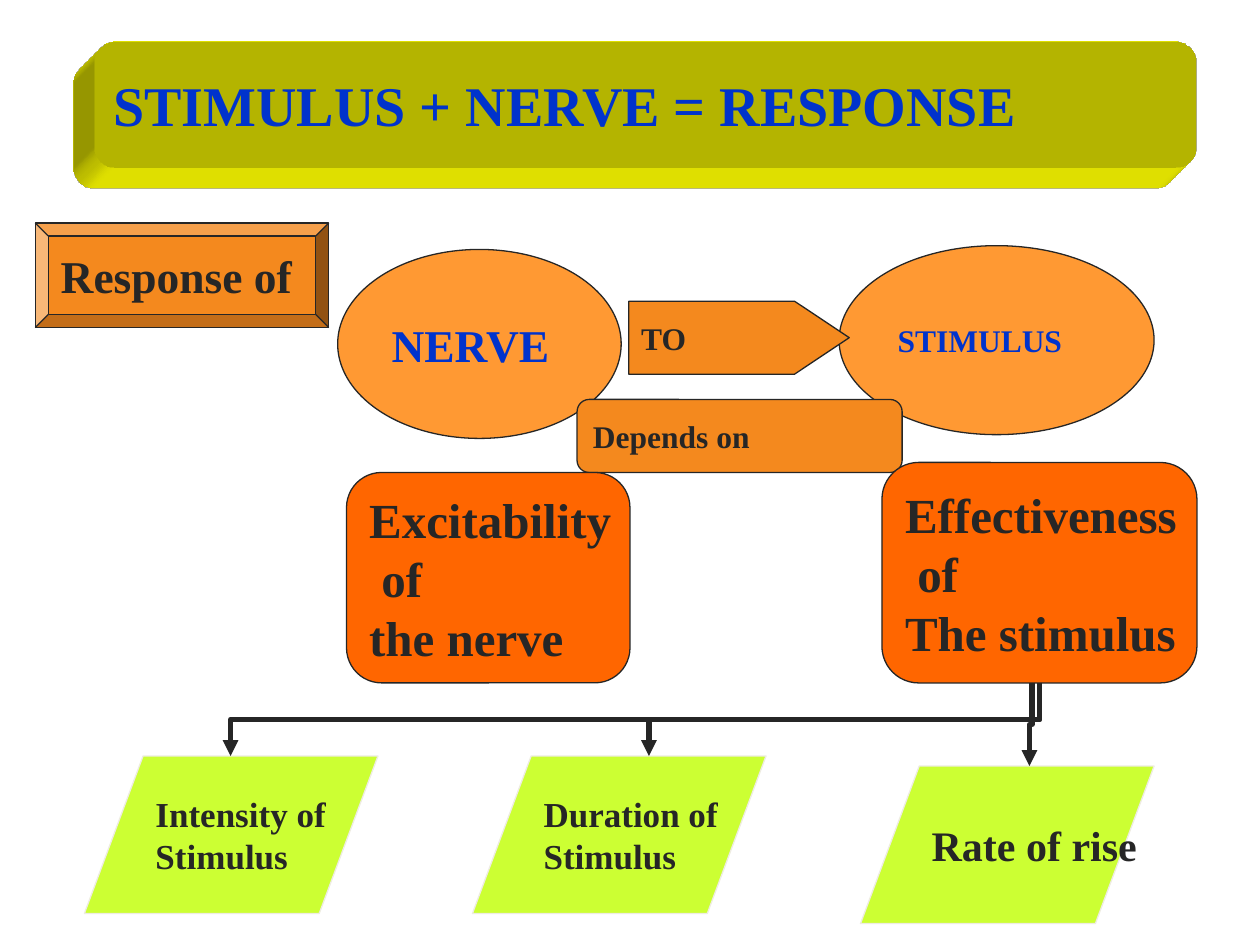
from lxml.etree import SubElement
from pptx import Presentation
from pptx.dml.color import RGBColor as Rgb
from pptx.enum.shapes import MSO_CONNECTOR as Link, MSO_SHAPE as Kind
from pptx.enum.text import MSO_ANCHOR as Anchor, MSO_AUTO_SIZE as Fit, PP_ALIGN as Align
from pptx.oxml import parse_xml
from pptx.oxml.ns import nsdecls, qn
from pptx.util import Inches, Pt

FONT = "Times New Roman"
HUES = {
    "yellow": "FFFF00", "blue": "0033CC", "peach": "FF9933",
    "amber": "F4891E", "orange": "FF6600", "lime": "CCFF33",
    "ink": "262626", "cream": "EEECE1",
}


def hue(name):
    """Return the named colour."""
    return Rgb.from_string(HUES[name])


def write(frame, lines, size, color):
    """Fill a text frame with left-aligned bold lines."""
    frame.auto_size = Fit.NONE
    frame.vertical_anchor = Anchor.MIDDLE
    for i, line in enumerate(lines):
        para = frame.add_paragraph() if i else frame.paragraphs[0]
        para.alignment = Align.LEFT
        run = para.add_run()
        run.text = line
        run.font.name, run.font.size, run.font.bold = FONT, Pt(size), True
        run.font.color.rgb = hue(color)


def block(slide, kind, box, fill, edge="ink"):
    """Add a filled shape, outlined if an edge colour is given."""
    shape = slide.shapes.add_shape(kind, *map(Inches, box))
    shape.shadow.inherit = False
    shape.fill.solid()
    shape.fill.fore_color.rgb = hue(fill)
    if edge:
        shape.line.color.rgb = hue(edge)
        shape.line.width = Pt(0.75)
    else:
        shape.line.fill.background()
    return shape


def label(slide, kind, box, fill, lines, size, color="ink", edge="ink"):
    """Add a shape with unwrapped text and return it."""
    shape = block(slide, kind, box, fill, edge)
    shape.text_frame.word_wrap = False
    write(shape.text_frame, lines, size, color)
    return shape


def banner(slide, box):
    """Draw the extruded title bar with the title on it."""
    x, y, w, h = box
    bar = block(slide, Kind.ROUNDED_RECTANGLE, box, "yellow", None)
    props = bar._element.spPr
    props.append(parse_xml(
        f'<a:scene3d {nsdecls("a")}><a:camera prst="legacyObliqueBottomLeft"/>'
        '<a:lightRig rig="legacyFlat3" dir="l"/></a:scene3d>'))
    props.append(parse_xml(
        f'<a:sp3d {nsdecls("a")} extrusionH="430200" prstMaterial="legacyMatte">'
        '<a:bevelT w="13500" h="13500" prst="angle"/>'
        '<a:bevelB w="13500" h="13500" prst="angle"/>'
        f'<a:extrusionClr><a:srgbClr val="{HUES["yellow"]}"/></a:extrusionClr></a:sp3d>'))
    title = slide.shapes.title
    title._element.addprevious(bar._element)
    title.left, title.top = Inches(x + 0.05), Inches(y)
    title.width, title.height = Inches(w - 0.1), Inches(h)
    write(title.text_frame, ["STIMULUS + NERVE = RESPONSE"], 32, "blue")


def chain(slide, box):
    """Draw the response of nerve to stimulus, and what it depends on."""
    x, y, _, _ = box
    parts = [
        (Kind.OVAL, (2.4, 0.21, 2.25, 1.5), "peach", ["NERVE"], 26, "blue"),
        (Kind.OVAL, (6.38, 0.18, 2.5, 1.5), "peach", ["STIMULUS"], 18, "blue"),
        (Kind.ROUNDED_RECTANGLE, (4.3, 1.4, 2.58, 0.58), "amber", ["Depends on"], 18, "ink"),
        (Kind.ROUNDED_RECTANGLE, (2.47, 1.98, 2.25, 1.67), "orange",
         ["Excitability", " of", "the nerve"], 28, "ink"),
        (Kind.BEVEL, (0, 0, 2.33, 0.83), "amber", ["Response of"], 26, "ink"),
        (Kind.PENTAGON, (4.71, 0.62, 1.75, 0.58), "amber", ["TO"], 18, "ink"),
        (Kind.ROUNDED_RECTANGLE, (6.72, 1.9, 2.5, 1.75), "orange",
         ["Effectiveness", " of", "The stimulus"], 28, "ink"),
    ]
    for kind, (dx, dy, w, h), fill, lines, size, color in parts:
        shape = label(slide, kind, (x + dx, y + dy, w, h), fill, lines, size, color)
        if kind == Kind.PENTAGON:
            shape.adjustments[0] = 0.75


def branch(slide, start, end):
    """Draw an elbow arrow that leaves downward and ends to the left."""
    (x1, y1), (x2, y2) = start, end
    drop, span = y2 - y1, x1 - x2
    left, top = (x1 + x2 - drop) / 2, (y1 + y2 - span) / 2
    line = slide.shapes.add_connector(
        Link.ELBOW, *map(Inches, (left, top, left + drop, top + span)))
    line.line.color.rgb = hue("ink")
    line.line.width = Pt(3)
    props = line._element.spPr
    props.find(qn("a:xfrm")).set("rot", "5400000")
    SubElement(props.find(qn("a:ln")), qn("a:tailEnd"), type="triangle")
    SubElement(props, qn("a:effectLst"))


def factors(slide, box):
    """Draw the three stimulus factors and the arrows that reach them."""
    x, y, _, _ = box
    step, top = 3.08, y + 0.58
    leaves = [
        (["Intensity of", "Stimulus"], 20, 0, 8.25, 1.83),
        (["Duration of", "Stimulus"], 20, 0, 8.25, 5.15),
        (["Rate of rise"], 24, 0.08, 8.19, 8.17),
    ]
    for i, (lines, size, dip, start, end) in enumerate(leaves):
        place = (x + i * step, top + dip, 2.33, 1.25)
        label(slide, Kind.FLOWCHART_DATA, place, "lime", lines, size, edge="cream")
        branch(slide, (start, y), (end, top + dip))


def main():
    """Build and save the slide."""
    deck = Presentation()
    deck.slide_width, deck.slide_height = Inches(10), Inches(7.5)
    slide = deck.slides.add_slide(deck.slide_layouts[5])
    banner(slide, (0.75, 0.33, 8.75, 1))
    chain(slide, (0.28, 1.77, 9.22, 3.65))
    factors(slide, (0.67, 5.42, 8.49, 1.91))
    deck.save("out.pptx")


if __name__ == "__main__":
    main()
